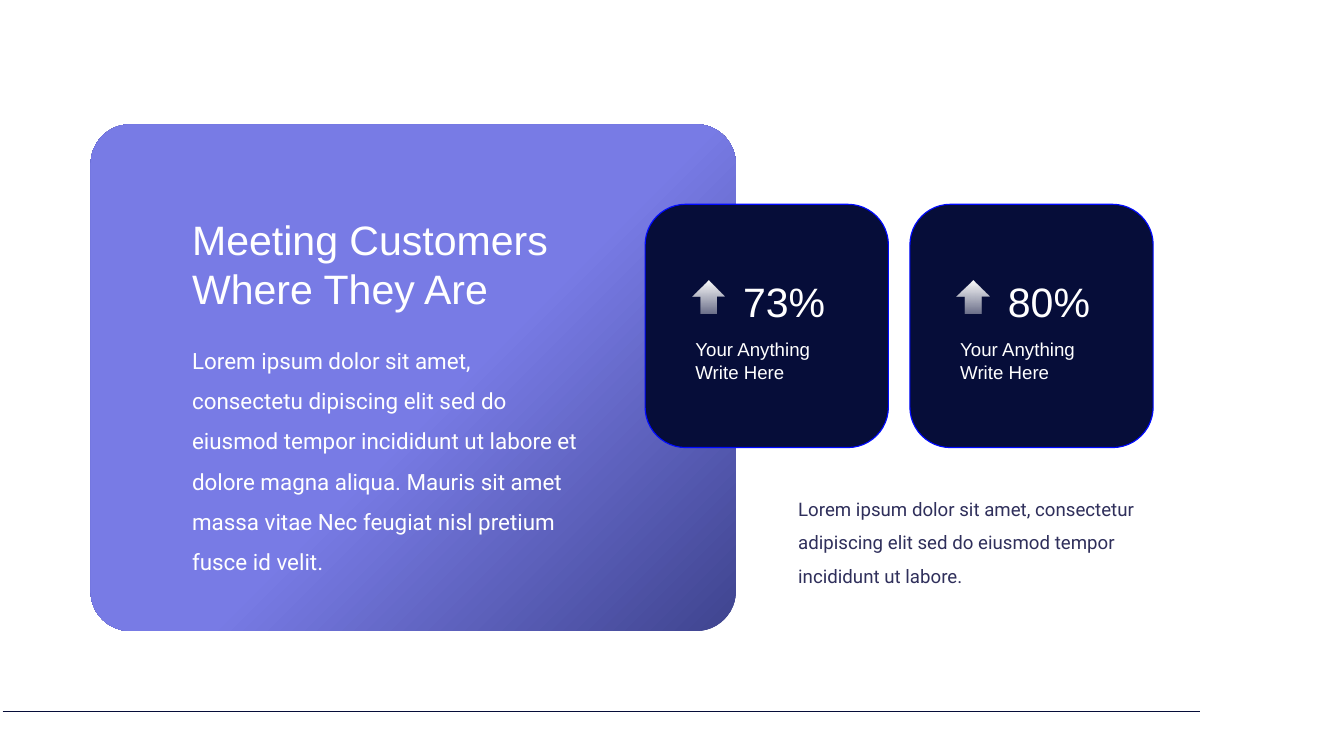
"""Build the customer outreach slide with two statistic cards."""
from lxml import etree
from pptx import Presentation
from pptx import util as u
from pptx.dml.color import RGBColor
from pptx.enum import shapes, text
from pptx.oxml import ns

NAVY = RGBColor(0x06, 0x0D, 0x39)
BLUE = RGBColor(0x00, 0x0A, 0xFF)
VIOLET = RGBColor(0x78, 0x7B, 0xE5)
INDIGO = RGBColor(0x3F, 0x44, 0x8F)
INK = RGBColor(0x2F, 0x2F, 0x5B)
WHITE = RGBColor(0xFF, 0xFF, 0xFF)

CARD_LEFT, CARD_TOP, CARD_SIZE, CARD_STEP = 9.6, 3.04, 3.62, 3.94
STATS = ["73%", "80%"]


def add_child(parent, tag, **attrs):
    child = etree.SubElement(parent, ns.qn(tag))
    for name, value in attrs.items():
        child.set(name, str(value))
    return child


def write(tf, content, size=20, font="Arial", color=WHITE, spacing=None):
    for i, line in enumerate(content.split("\n")):
        p = tf.add_paragraph() if i else tf.paragraphs[0]
        p.line_spacing = spacing
        r = p.add_run()
        r.text = line
        r.font.size = u.Pt(size)
        r.font.name = font
        r.font.color.rgb = color


class SlideBuilder:
    def __init__(self, slide, body_font="Roboto", body_spacing=1.5):
        self.s = slide
        self.body = {"font": body_font, "spacing": body_spacing}

    def text(self, box, content, **style):
        tf = self.s.shapes.add_textbox(*map(u.Inches, box)).text_frame
        tf.word_wrap = True
        tf.auto_size = text.MSO_AUTO_SIZE.SHAPE_TO_FIT_TEXT
        write(tf, content, **style)

    def paragraph(self, box, content, **style):
        self.text(box, content, **self.body, **style)

    def shape(self, kind, box, fill=None, line=None):
        sp = self.s.shapes.add_shape(kind, *map(u.Inches, box))
        sp.shadow.inherit = False
        if fill is None:
            sp.fill.background()
        else:
            sp.fill.solid()
            sp.fill.fore_color.rgb = fill
        if line is None:
            sp.line.fill.background()
        else:
            sp.line.color.rgb = line
            sp.line.width = u.Pt(1.25)
        return sp

    def gradient(self, sp, stops, angle=None):
        grad = etree.Element(ns.qn("a:gradFill"), rotWithShape="1")
        stop_list = add_child(grad, "a:gsLst")
        for pos, color, opacity in stops:
            stop = add_child(stop_list, "a:gs", pos=pos * 1000)
            rgb = add_child(stop, "a:srgbClr", val=color)
            if opacity < 100:
                add_child(rgb, "a:alpha", val=opacity * 1000)
        if angle is None:
            circle = add_child(grad, "a:path", path="circle")
            add_child(circle, "a:fillToRect", r=100000, b=100000)
        else:
            add_child(grad, "a:lin", ang=angle * 60000, scaled=0)
        sp_pr = sp._element.spPr
        sp_pr.replace(sp_pr.find(ns.qn("a:noFill")), grad)

    def line(self, x1, y1, x2, y2, color, width):
        c = self.s.shapes.add_connector(
            shapes.MSO_CONNECTOR.STRAIGHT, *map(u.Inches, (x1, y1, x2, y2)))
        c.line.color.rgb = color
        c.line.width = u.Pt(width)
        add_child(c._element.spPr, "a:effectLst")

    def panel(self, box):
        sp = self.shape(shapes.MSO_SHAPE.ROUNDED_RECTANGLE, box)
        sp.adjustments[0] = 0.078
        self.gradient(sp, [(54, VIOLET, 100), (100, INDIGO, 100)])

    def card(self, x, y, value, caption):
        self.shape(shapes.MSO_SHAPE.ROUNDED_RECTANGLE,
                   (x, y, CARD_SIZE, CARD_SIZE), NAVY, BLUE)
        self.text((x + 1.36, y + 1.02, 1.94, 0.84), value, size=44)
        arrow = self.shape(shapes.MSO_SHAPE.DOWN_ARROW,
                           (x + 0.7, y + 1.14, 0.48, 0.49))
        arrow.rotation = 180
        self.gradient(arrow, [(0, WHITE, 40), (100, WHITE, 100)], angle=90)
        self.text((x + 0.65, y + 1.94, 2.65, 0.77), caption)


def main():
    prs = Presentation()
    prs.slide_width, prs.slide_height = u.Inches(20), u.Inches(11.25)
    b = SlideBuilder(prs.slides.add_slide(prs.slide_layouts[6]))

    b.line(0.04, 10.59, 17.86, 10.59, NAVY, 0.5)
    b.panel((1.35, 1.85, 9.6, 7.54))
    b.text((2.76, 3.14, 6.01, 1.58), "Meeting Customers Where They Are", size=44)
    b.paragraph((2.76, 4.91, 6.03, 3.07),
                "Lorem ipsum dolor sit amet, consectetu dipiscing elit sed do "
                "eiusmod tempor incididunt ut labore et dolore magna aliqua. "
                "Mauris sit amet massa vitae Nec feugiat nisl pretium fusce "
                "id velit.", size=24)
    for i, value in enumerate(STATS):
        b.card(CARD_LEFT + i * CARD_STEP, CARD_TOP, value,
               "Your Anything\nWrite Here")
    b.paragraph((11.78, 7.19, 5.67, 1.57),
                "Lorem ipsum dolor sit amet, consectetur adipiscing elit sed "
                "do eiusmod tempor incididunt ut labore.", color=INK)

    prs.save("out.pptx")


if __name__ == "__main__":
    main()
